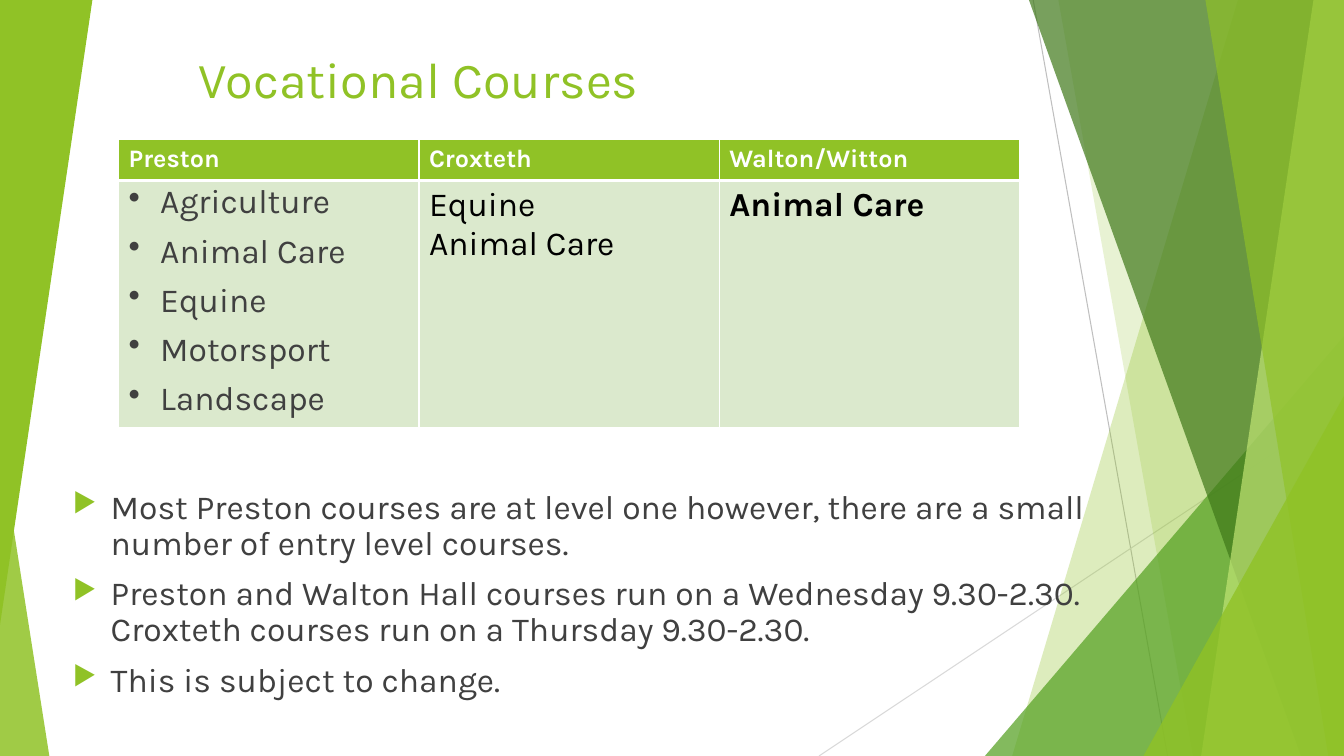
import pptx
import pptx.util
import pptx.dml.color
import pptx.enum.shapes
import pptx.oxml
import pptx.oxml.ns
from lxml import etree

PX = 9525
FONT = "Karla"
RGBColor = pptx.dml.color.RGBColor
LIME = RGBColor(0x90, 0xC2, 0x26)
PALE_LIME = RGBColor(0xC0, 0xE4, 0x74)
GREEN = RGBColor(0x54, 0xA0, 0x21)
DARK_GREEN = RGBColor(0x3F, 0x78, 0x19)
CELL_GREEN = RGBColor(0xDB, 0xE9, 0xCD)
GREY = RGBColor(0x40, 0x40, 0x40)
MID_GREY = RGBColor(0xBF, 0xBF, 0xBF)
LIGHT_GREY = RGBColor(0xD9, 0xD9, 0xD9)
BLACK = RGBColor(0, 0, 0)
WHITE = RGBColor(0xFF, 0xFF, 0xFF)
qn = pptx.oxml.ns.qn


def paint(shape, color, opacity):
    shape.shadow.inherit = False
    shape.line.fill.background()
    shape.fill.solid()
    shape.fill.fore_color.rgb = color
    if opacity < 100:
        tint = shape.fill._xPr.find(qn("a:solidFill"))[0]
        etree.SubElement(tint, qn("a:alpha"), val=str(opacity * 1000))


def write(frame, lines, size, color, bold=False, bullet=None, indent=0, bullet_color=None):
    frame.text = "\n".join(lines)
    for index, para in enumerate(frame.paragraphs):
        if bullet:
            props = para._p.get_or_add_pPr()
            props.set("marL", str(indent * PX))
            props.set("indent", str(-indent * PX))
            if bullet_color:
                tint = etree.SubElement(props, qn("a:buClr"))
                etree.SubElement(tint, qn("a:srgbClr"), val=str(bullet_color))
                etree.SubElement(props, qn("a:buSzPct"), val="80000")
            etree.SubElement(props, qn("a:buChar"), char=bullet)
            para.line_spacing = 0.9
            para.space_before = pptx.util.Pt(10 if index else 0)
        for span in para.runs:
            span.font.name = FONT
            span.font.size = pptx.util.Pt(size)
            span.font.bold = bold
            span.font.color.rgb = color


deck = pptx.Presentation()
deck.slide_width = 1280 * PX
deck.slide_height = 720 * PX
page = deck.slides.add_slide(deck.slide_layouts[6])
shapes = page.shapes

for x1, y1, x2, y2, color in [
    (984, 0, 1112, 720, MID_GREY),
    (1280, 387, 780, 720, LIGHT_GREY),
]:
    line = shapes.add_connector(
        pptx.enum.shapes.MSO_CONNECTOR.STRAIGHT, x1 * PX, y1 * PX, x2 * PX, y2 * PX
    )
    line.line.color.rgb = color
    line.line.width = pptx.util.Pt(0.75)
    etree.SubElement(line._element.spPr, qn("a:effectLst"))

bands = [
    (1179, 964, LIME, 30),
    (1008, 1136, LIME, 20),
    (938, 320, 342, 400, 1, 0, GREEN, 72),
    (980, 1239, DARK_GREEN, 70),
    (1251, 1144, PALE_LIME, 70),
    (1148, 1265, LIME, 65),
    (1089, 377, 191, 343, 1, 0, LIME, 80),
    (0, 421, 47, 299, 0, 0, LIME, 85),
    (0, 0, 88, 595, 1, 180, LIME, 100),
]
for *geometry, color, opacity in bands:
    if len(geometry) == 2:
        top_x, bottom_x = geometry
        outline = shapes.build_freeform(top_x, 0, scale=PX)
        outline.add_line_segments([(1280, 0), (1280, 720), (bottom_x, 720)])
        band = outline.convert_to_shape()
    else:
        left, top, width, height, apex, turn = geometry
        band = shapes.add_shape(
            pptx.enum.shapes.MSO_SHAPE.ISOSCELES_TRIANGLE,
            left * PX, top * PX, width * PX, height * PX,
        )
        band.adjustments[0] = apex
        band.rotation = turn
    paint(band, color, opacity)

title = shapes.add_textbox(180 * PX, 41 * PX, 756 * PX, 138 * PX)
title.text_frame.word_wrap = True
write(title.text_frame, ["Vocational Courses"], 36, LIME)

notes = [
    "Most Preston courses are at level one however, there are a small number of entry level courses.",
    "Preston and Walton Hall courses run on a Wednesday 9.30-2.30. Croxteth courses run on a Thursday 9.30-2.30.",
    "This is subject to change.",
]
body = shapes.add_textbox(60 * PX, 462 * PX, 995 * PX, 240 * PX)
body.text_frame.word_wrap = True
write(body.text_frame, notes, 24, GREY, bullet="▶", indent=36, bullet_color=LIME)

courses = {
    "Preston": ["Agriculture", "Animal Care", "Equine", "Motorsport", "Landscape"],
    "Croxteth": ["Equine", "Animal Care"],
    "Walton/Witton": ["Animal Care"],
}
table = shapes.add_table(2, 3, 113 * PX, 133 * PX, 858 * PX, 269 * PX).table
table.rows[0].height = 39 * PX
table.rows[1].height = 230 * PX
for column, (site, subjects) in enumerate(courses.items()):
    table.columns[column].width = 286 * PX
    header, cell = table.cell(0, column), table.cell(1, column)
    write(header.text_frame, [site], 18, WHITE, bold=True)
    if column == 0:
        write(cell.text_frame, subjects, 24, GREY, bullet="•", indent=30)
    else:
        write(cell.text_frame, subjects, 24, BLACK, bold=column == 2)
    for item, color, bottom, top in [(header, LIME, 3, 1), (cell, CELL_GREEN, 1, 3)]:
        props = item._tc.get_or_add_tcPr()
        for side, width in [("L", 1), ("R", 1), ("T", top), ("B", bottom)]:
            border = etree.SubElement(props, qn("a:ln" + side), w=str(pptx.util.Pt(width)))
            tint = etree.SubElement(border, qn("a:solidFill"))
            etree.SubElement(tint, qn("a:srgbClr"), val=str(WHITE))
        item.fill.solid()
        item.fill.fore_color.rgb = color

deck.save("out.pptx")
